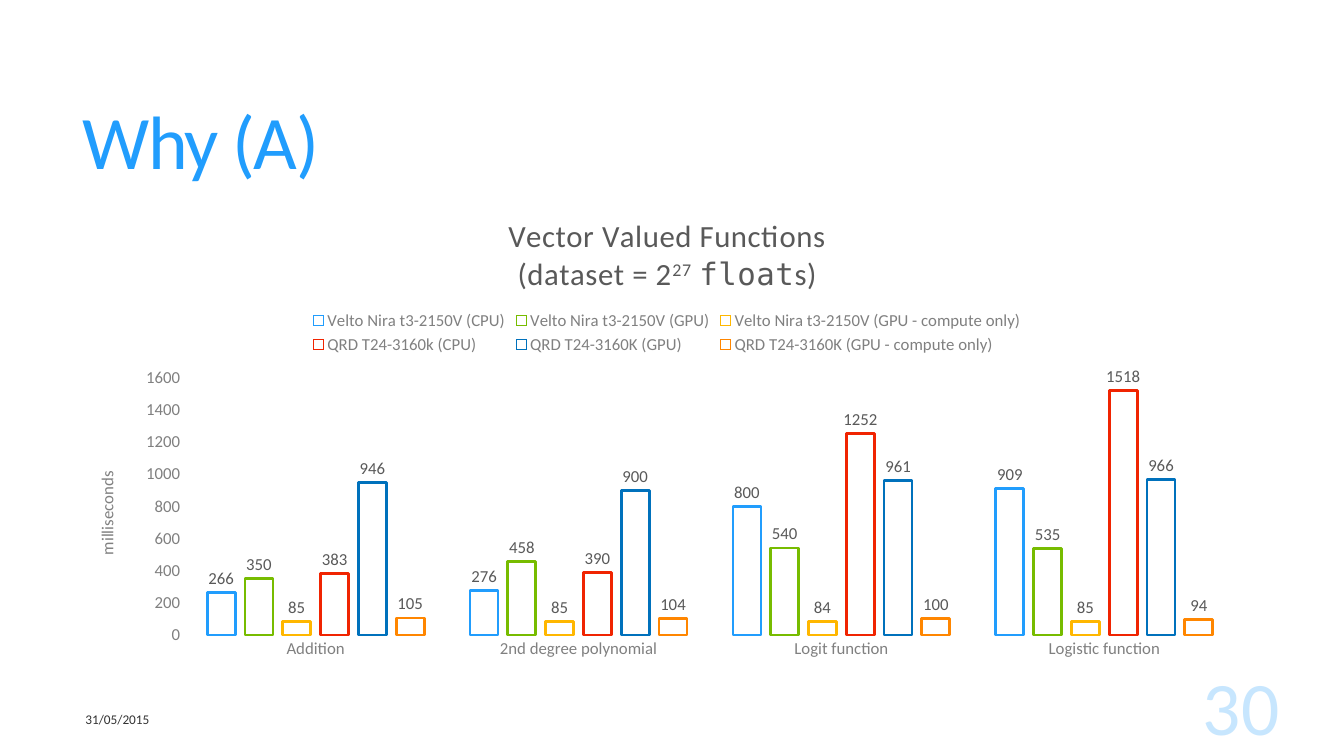
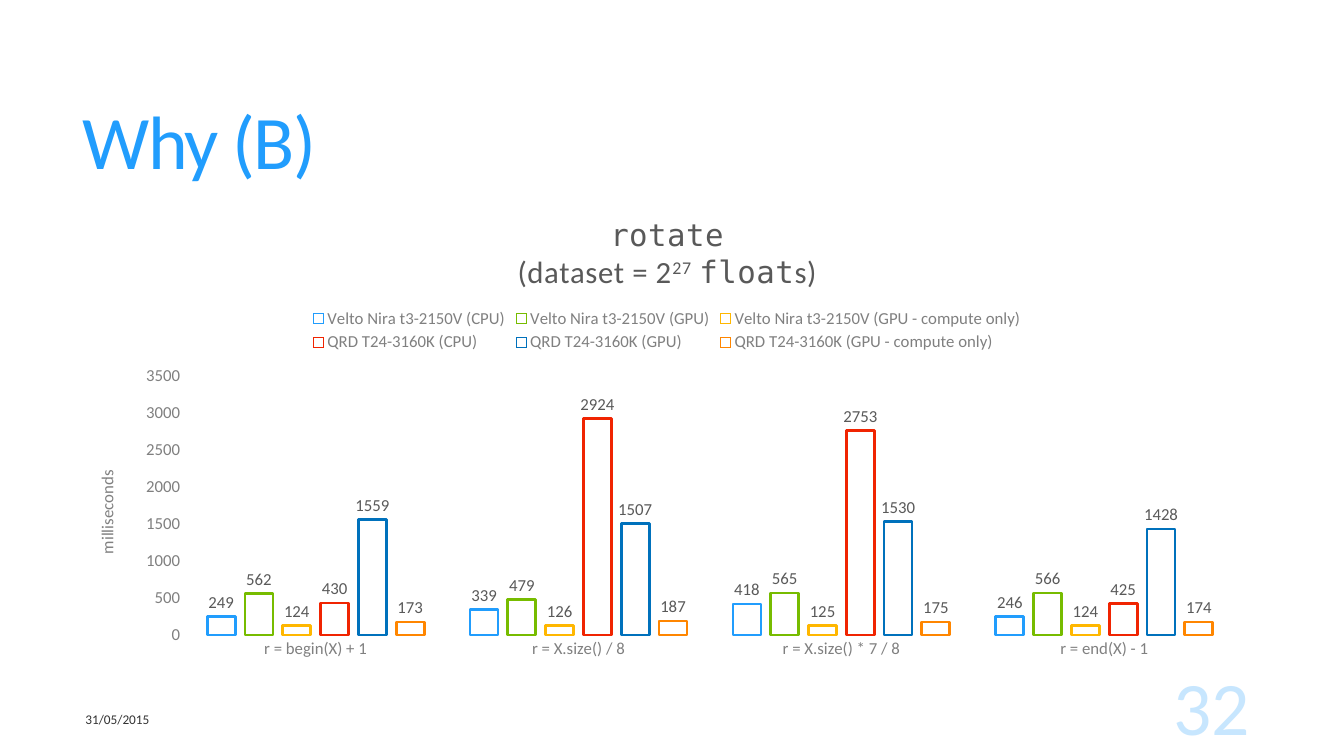
from dataclasses import dataclass

from pptx import Presentation
from pptx.chart.data import CategoryChartData as ChartData
from pptx.dml.color import RGBColor
from pptx.enum.chart import XL_CHART_TYPE as ChartType
from pptx.enum.chart import XL_LABEL_POSITION as LabelPos
from pptx.enum.chart import XL_LEGEND_POSITION as LegendPos
from pptx.enum.chart import XL_TICK_MARK as Tick
from pptx.enum.text import MSO_ANCHOR as Anchor
from pptx.enum.text import MSO_AUTO_SIZE as AutoSize
from pptx.enum.text import PP_ALIGN as Align
from pptx.oxml.ns import qn
from pptx.util import Inches, Pt


@dataclass(frozen=True)
class Theme:
    font: str = "Calibri"
    mono: str = "DejaVu Sans Mono"
    title: str = "219DFD"
    number: str = "C7E6FE"
    date: str = "333333"
    dark: str = "595959"
    grey: str = "808080"
    bars: tuple = ("219DFD", "77BC00", "FFB700", "F02401", "0071BC", "FF8600")
    big: float = 54
    chart_title: float = 22
    label: float = 12
    small: float = 9.5


THEME = Theme()
WIDTH, HEIGHT = 13.34, 7.5
TITLE_AREA = (5.4, 7.33, 88.3, 24.13)
CHART_AREA = (5.55, 26.27, 88.16, 62.13)
DATE_AREA = (5.62, 93.47, 33.73, 3.33)
DATE = "31/05/2015"

DATASET = [("(dataset = 2", {}), ("27", {"baseline": 30000}), (" ", {}),
           ("float", {"name": THEME.mono}), ("s)", {})]
MODES = ("CPU", "GPU", "GPU - compute only")

SLIDES = [
    {
        "title": "Why (A)", "number": "30", "number_left": 87.35,
        "heading": [("Vector Valued Functions", {})],
        "chips": ["Velto Nira t3-2150V"] * 3 + ["QRD T24-3160k"] + ["QRD T24-3160K"] * 2,
        "top": 1600, "step": 200,
        "groups": {
            "Addition": (266, 350, 85, 383, 946, 105),
            "2nd degree polynomial": (276, 458, 85, 390, 900, 104),
            "Logit function": (800, 540, 84, 1252, 961, 100),
            "Logistic function": (909, 535, 85, 1518, 966, 94),
        },
    },
    {
        "title": "Why (B)", "number": "32", "number_left": 85.18,
        "heading": [("rotate", {"name": THEME.mono})],
        "chips": ["Velto Nira t3-2150V"] * 3 + ["QRD T24-3160K"] * 3,
        "top": 3500, "step": 500,
        "groups": {
            "r = begin(X) + 1": (249, 562, 124, 430, 1559, 173),
            "r = X.size() / 8": (339, 479, 126, 2924, 1507, 187),
            "r = X.size() * 7 / 8": (418, 565, 125, 2753, 1530, 175),
            "r = end(X) - 1": (246, 566, 124, 425, 1428, 174),
        },
    },
]


def area(left, top, width, height):
    return [Inches(share * side / 100) for share, side in
            zip((left, top, width, height), (WIDTH, HEIGHT) * 2)]


def style(font, size, color, name=THEME.font):
    font.size = Pt(size)
    font.bold = False
    font.name = name
    font.color.rgb = RGBColor.from_string(color)


def add_run(p, text, size, color, name=THEME.font, spacing=0, baseline=0):
    r = p.add_run()
    r.text = text
    style(r.font, size, color, name)
    for key, value in (("spc", spacing), ("baseline", baseline)):
        if value:
            r.font._element.set(key, str(value))


def write(sp, text, align=Align.LEFT, line_spacing=1, **fmt):
    tf = sp.text_frame
    tf.word_wrap = True
    tf.auto_size = AutoSize.NONE
    tf.vertical_anchor = Anchor.MIDDLE
    p = tf.paragraphs[0]
    p.alignment = align
    p.line_spacing = line_spacing
    add_run(p, text, **fmt)


def add_title(s, text):
    sp = s.shapes.title
    sp.left, sp.top, sp.width, sp.height = area(*TITLE_AREA)
    write(sp, text, line_spacing=0.85, size=THEME.big, color=THEME.title, spacing=-120)


def add_text(s, box, text, **fmt):
    write(s.shapes.add_textbox(*area(*box)), text, **fmt)


def add_heading(chart, lines):
    tf = chart.chart_title.text_frame
    for i, parts in enumerate(lines):
        p = tf.add_paragraph() if i else tf.paragraphs[0]
        for text, fmt in parts:
            add_run(p, text, THEME.chart_title, THEME.dark, spacing=50, **fmt)


def style_axis(axis):
    axis.has_major_gridlines = False
    axis.major_tick_mark = axis.minor_tick_mark = Tick.NONE
    axis.format.line.fill.background()
    style(axis.tick_labels.font, THEME.label, THEME.grey)


def style_series(series, color):
    series.format.fill.background()
    series.format.line.color.rgb = RGBColor.from_string(color)
    series.format.line.width = Pt(2)
    series.invert_if_negative = False
    labels = series.data_labels
    labels.show_value = True
    labels.position = LabelPos.OUTSIDE_END
    style(labels.font, THEME.label, THEME.dark)


def add_bar_chart(s, heading, chips, groups, top, step):
    data = ChartData()
    data.categories = list(groups)
    for chip, mode, values in zip(chips, MODES * 2, zip(*groups.values())):
        data.add_series(f"{chip} ({mode})", values)
    chart = s.shapes.add_chart(ChartType.COLUMN_CLUSTERED, *area(*CHART_AREA), data).chart
    style(chart.font, 10, "000000")
    add_heading(chart, [heading, DATASET])

    chart.has_legend = True
    chart.legend.position = LegendPos.TOP
    chart.legend.include_in_layout = False
    style(chart.legend.font, THEME.label, THEME.grey)

    style_axis(chart.category_axis)
    axis = chart.value_axis
    style_axis(axis)
    axis.minimum_scale, axis.maximum_scale, axis.major_unit = 0, top, step
    tf = axis.axis_title.text_frame
    add_run(tf.paragraphs[0], "milliseconds", THEME.label, THEME.grey)
    body = tf._txBody.find(qn("a:bodyPr"))
    body.set("rot", "-5400000")
    body.set("vert", "horz")

    plot = chart.plots[0]
    plot.gap_width, plot.overlap = 164, -35
    plot.vary_by_categories = False
    for series, color in zip(plot.series, THEME.bars):
        style_series(series, color)


def add_slide(prs, title, number, number_left, **chart):
    s = prs.slides.add_slide(prs.slide_layouts[5])
    add_title(s, title)
    add_bar_chart(s, **chart)
    add_text(s, DATE_AREA, DATE, size=THEME.small, color=THEME.date)
    add_text(s, (number_left, 86.6, 10, 13.33), number, align=Align.CENTER,
             size=THEME.big, color=THEME.number)


def main():
    prs = Presentation()
    prs.slide_width, prs.slide_height = Inches(WIDTH), Inches(HEIGHT)
    for content in SLIDES:
        add_slide(prs, **content)
    prs.save("out.pptx")


if __name__ == "__main__":
    main()
